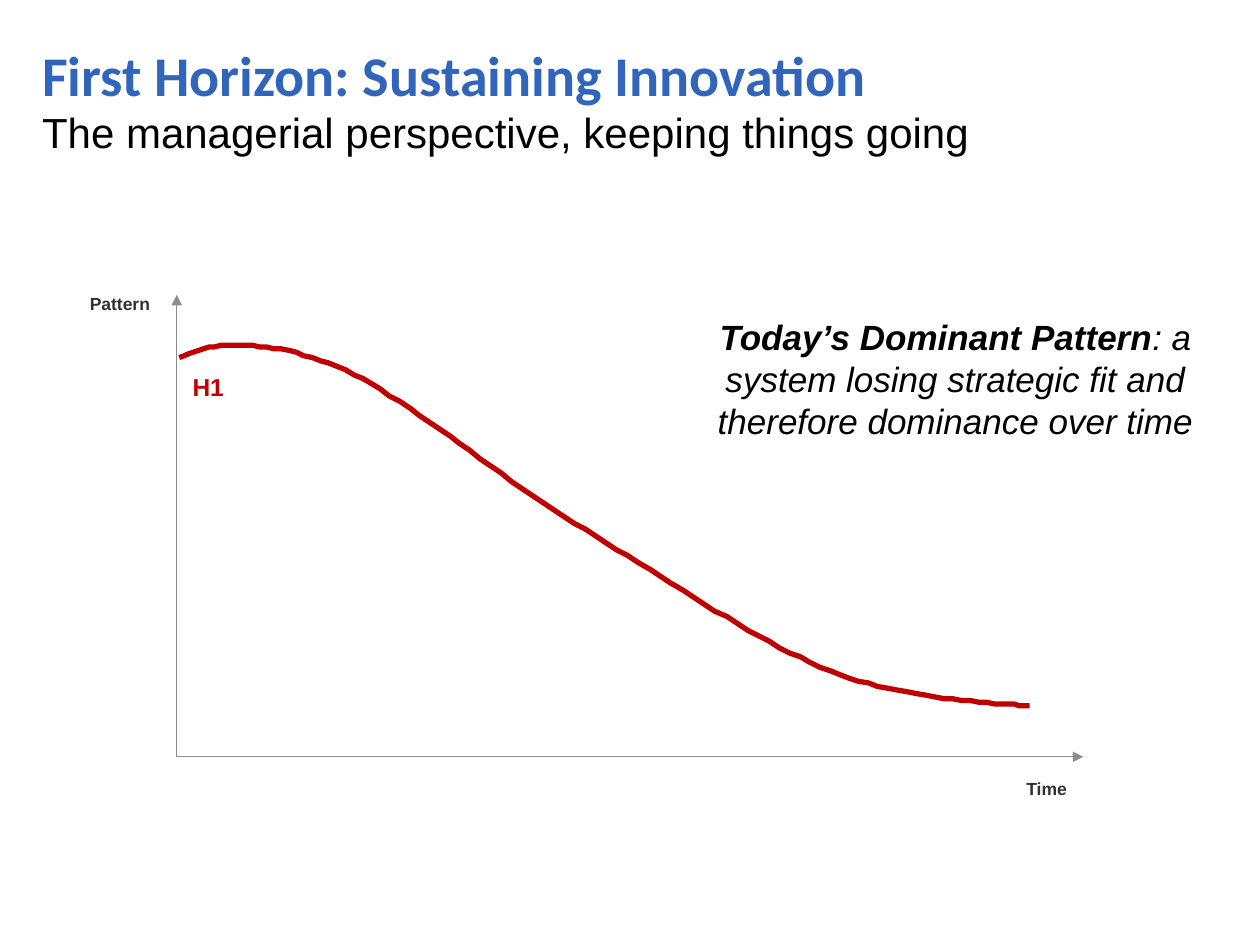
from lxml import etree
from pptx import Presentation
from pptx import util as u
from pptx.dml import color
from pptx.enum import shapes, text
from pptx.oxml import ns

RED = "C00000"
GREY = "8C8C8C"
LABEL = "313131"
BLACK = "000000"


def rgb(value):
    return color.RGBColor.from_string(value)


def place(shape, left, top, width, height):
    shape.left, shape.top = u.Pt(left), u.Pt(top)
    shape.width, shape.height = u.Pt(width), u.Pt(height)


def write(shape, runs, size, hex_color, align=text.PP_ALIGN.CENTER, font="Arial", wrap=True):
    frame = shape.text_frame
    frame.margin_left = frame.margin_top = frame.margin_right = frame.margin_bottom = 0
    frame.word_wrap = wrap
    frame.auto_size = text.MSO_AUTO_SIZE.NONE
    frame.vertical_anchor = text.MSO_ANCHOR.TOP
    paragraph = frame.paragraphs[0]
    paragraph.alignment = align
    for words, bold, italic in runs:
        run = paragraph.add_run()
        run.text = words
        run.font.name = font
        run.font.size = u.Pt(size)
        run.font.bold = bold
        run.font.italic = italic
        run.font.color.rgb = rgb(hex_color)


def add_text(slide, box, runs, size, hex_color, **options):
    shape = slide.shapes.add_textbox(*(u.Pt(length) for length in box))
    write(shape, runs, size, hex_color, **options)


def add_heading(slide, left, top, width):
    title = slide.shapes.title
    place(title, left, top, width, 37)
    write(title, [("First Horizon: Sustaining Innovation", True, False)], 32, "3165BB",
          align=text.PP_ALIGN.LEFT, font="Calibri")
    add_text(slide, (left, top + 38, width, 60),
             [("The managerial perspective, keeping things going", False, False)], 24, BLACK,
             align=text.PP_ALIGN.LEFT)


def add_axes(slide, left, top, width, height):
    group = slide.shapes.add_group_shape()
    bottom = top + height
    for tip_x, tip_y in ((left, top), (left + width, bottom)):
        axis = group.shapes.add_connector(
            shapes.MSO_CONNECTOR.STRAIGHT,
            u.Pt(left), u.Pt(bottom), u.Pt(tip_x), u.Pt(tip_y))
        axis.line.color.rgb = rgb(GREY)
        axis.line.width = u.Pt(0.75)
        etree.SubElement(axis.line._get_or_add_ln(), ns.qn("a:tailEnd"), type="triangle")
        etree.SubElement(axis._element.spPr, ns.qn("a:effectLst"))


def bezier_point(points, t):
    weights = ((1 - t) ** 3, 3 * t * (1 - t) ** 2, 3 * t ** 2 * (1 - t), t ** 3)
    return tuple(sum(w * point[i] for w, point in zip(weights, points)) for i in (0, 1))


def add_decline_curve(slide, left, top):
    controls = [(0, 7.2), (20.2, -2.9), (51.8, -3.6), (90, 12.2),
                (127.4, 28.1), (179.3, 72.7), (226.1, 101.5),
                (272.9, 130.3), (328.3, 168.5), (371.5, 185.8),
                (414.7, 203), (465.8, 204.5), (486, 205.9)]
    steps = 24
    curve = [bezier_point(controls[start:start + 4], step / steps)
             for start in range(0, len(controls) - 1, 3)
             for step in range(1, steps + 1)]
    builder = slide.shapes.build_freeform(*controls[0], scale=u.Pt(1))
    builder.add_line_segments(curve, close=False)
    shape = builder.convert_to_shape(u.Pt(left), u.Pt(top))
    shape.fill.background()
    shape.line.color.rgb = rgb(RED)
    shape.line.width = u.Pt(3)
    shape.shadow.inherit = False


def add_horizon_chart(slide, left, top, width, height):
    add_axes(slide, left, top, width, height)
    add_decline_curve(slide, left + 1.4, top + 28.8)
    labels = [("Pattern", (left - 50, top - 1, 35, 12), 10, LABEL),
              ("Time", (left + width - 33, top + height + 12, 24, 12), 10, LABEL),
              ("H1", (left + 5, top + 44, 26, 17), 14, RED)]
    for words, box, size, hex_color in labels:
        add_text(slide, box, [(words, True, False)], size, hex_color, wrap=False)


def add_pattern_note(slide, left, top, width, height):
    add_text(slide, (left, top, width, height),
             [("Today’s Dominant Pattern", True, True),
              (": a system losing strategic fit and therefore dominance over time", False, True)],
             20, BLACK)


def main():
    presentation = Presentation()
    presentation.slide_width, presentation.slide_height = u.Pt(720), u.Pt(540)
    slide = presentation.slides.add_slide(presentation.slide_layouts[5])
    add_heading(slide, 24, 23, 639)
    add_horizon_chart(slide, 101, 168.5, 518, 264)
    add_pattern_note(slide, 408, 180, 276, 73)
    presentation.save("out.pptx")


if __name__ == "__main__":
    main()
